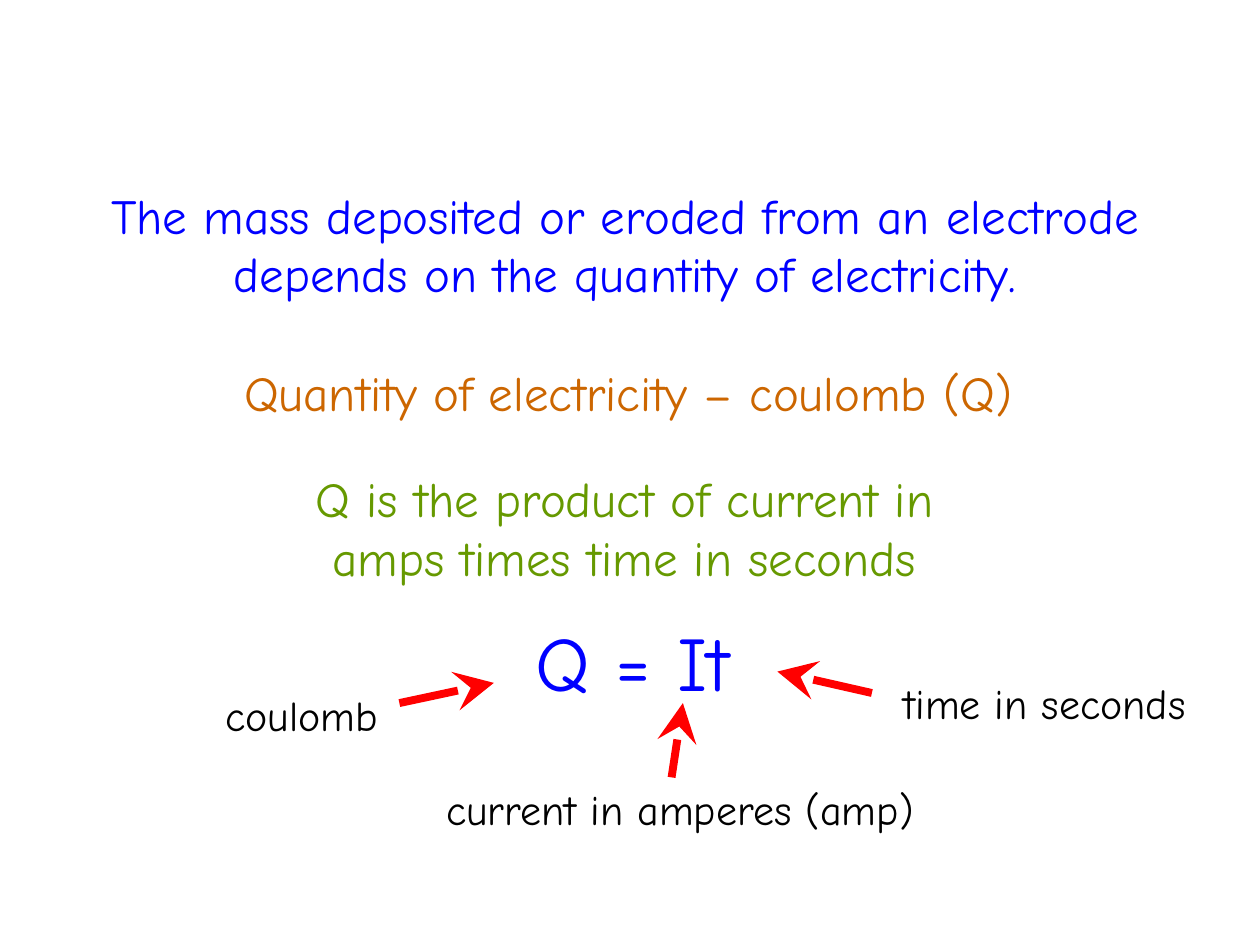
"""Build the slide on electrode mass and quantity of electricity."""
from lxml.etree import SubElement
from pptx import Presentation
from pptx.dml.color import RGBColor
from pptx.enum.shapes import MSO_CONNECTOR
from pptx.enum.text import MSO_AUTO_SIZE, PP_ALIGN
from pptx.oxml.ns import qn
from pptx.util import Inches, Pt

STATEMENTS = [
    ("The mass deposited or eroded from an electrode depends on the quantity of electricity.",
     (0.42, 1.42, 9.08, 1.03), 28, "0000FF", True),
    ("Quantity of electricity – coulomb (Q)", (1.5, 2.83, 6.97, 0.57), 28, "CC6600", False),
    ("Q is the product of current in amps times time in seconds",
     (2.08, 3.67, 5.75, 1.03), 28, "669900", True),
    ("Q = It", (4, 4.83, 2.04, 0.83), 44, "0000FF", False),
]
UNITS = [
    ("coulomb", (1.67, 5.42, 1.45, 0.5), (3.17, 5.58, 3.92, 5.42)),
    ("current in amperes (amp)", (3.35, 6.17, 4.09, 0.5), (5.33, 6.17, 5.42, 5.58)),
    ("time in seconds", (7, 5.33, 2.58, 0.5), (6.92, 5.5, 6.17, 5.33)),
]
FRAME_FORMAT = {"auto_size": MSO_AUTO_SIZE.SHAPE_TO_FIT_TEXT}
ARROWHEAD = {"type": "stealth", "w": "lg", "len": "lg"}


def color(value):
    return RGBColor.from_string(value)


def apply(target, values):
    for name, value in values.items():
        setattr(target, name, value)


def add_words(shapes, words, place, size, ink, wrap):
    frame = shapes.add_textbox(*map(Inches, place)).text_frame
    apply(frame, FRAME_FORMAT | {"word_wrap": wrap})
    paragraph = frame.paragraphs[0]
    paragraph.alignment = PP_ALIGN.CENTER
    run = paragraph.add_run()
    run.text = words
    apply(run.font, {"name": "Comic Neue", "size": Pt(size)})
    run.font.color.rgb = color(ink)


def add_arrow(shapes, ends):
    arrow = shapes.add_connector(MSO_CONNECTOR.STRAIGHT, *map(Inches, ends))
    arrow.line.color.rgb = color("FF0000")
    arrow.line.width = Pt(4.5)
    properties = arrow.line._get_or_add_ln()
    SubElement(properties, qn("a:tailEnd"), ARROWHEAD)
    SubElement(properties.getparent(), qn("a:effectLst"))


def main():
    deck = Presentation()
    apply(deck, {"slide_width": Inches(10), "slide_height": Inches(7.5)})
    slide = deck.slides.add_slide(deck.slide_layouts[6])
    for statement in STATEMENTS:
        add_words(slide.shapes, *statement)
    for unit, place, ends in UNITS:
        callout = slide.shapes.add_group_shape()
        add_words(callout.shapes, unit, place, 24, "000000", False)
        add_arrow(callout.shapes, ends)
    deck.save("out.pptx")


if __name__ == "__main__":
    main()
